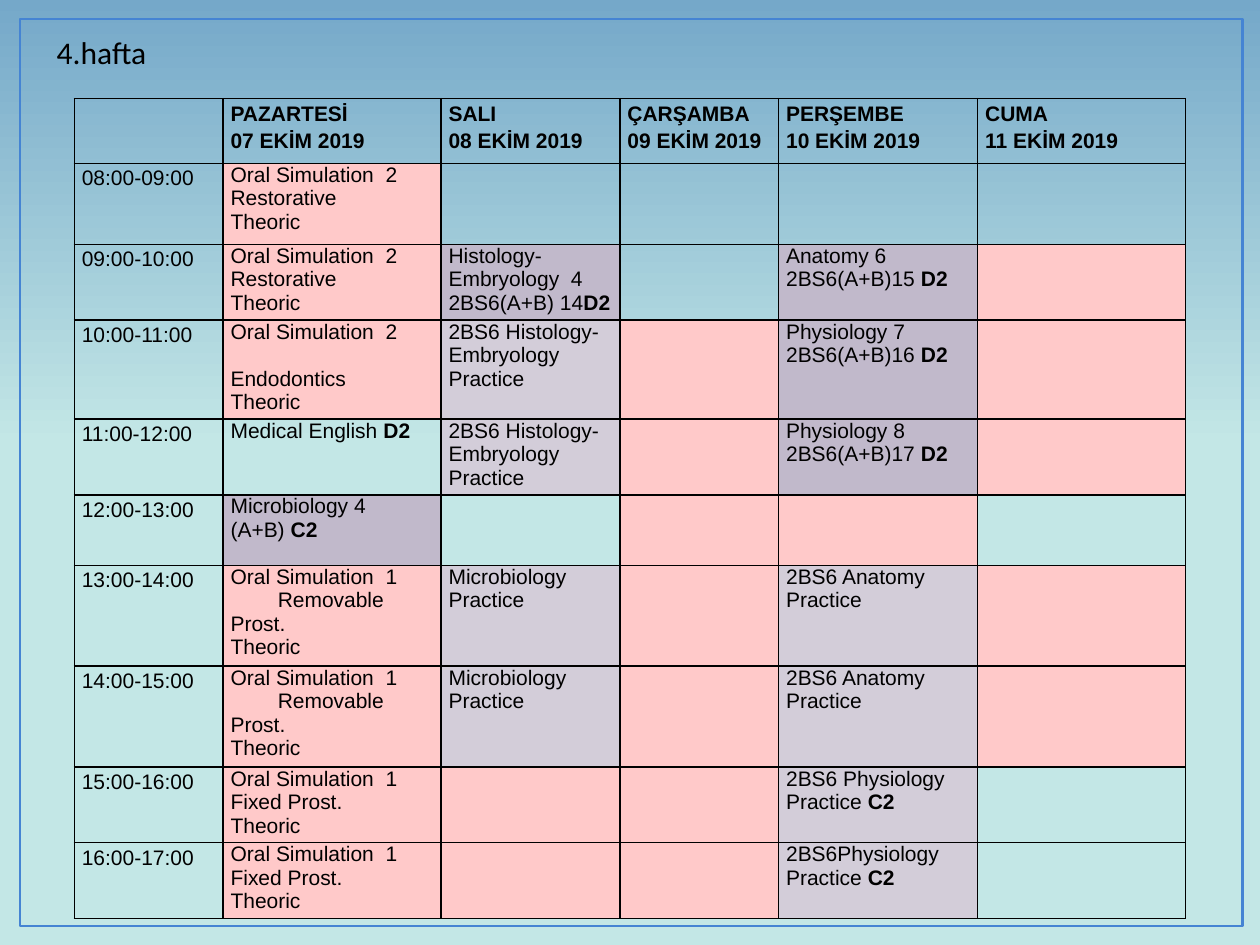
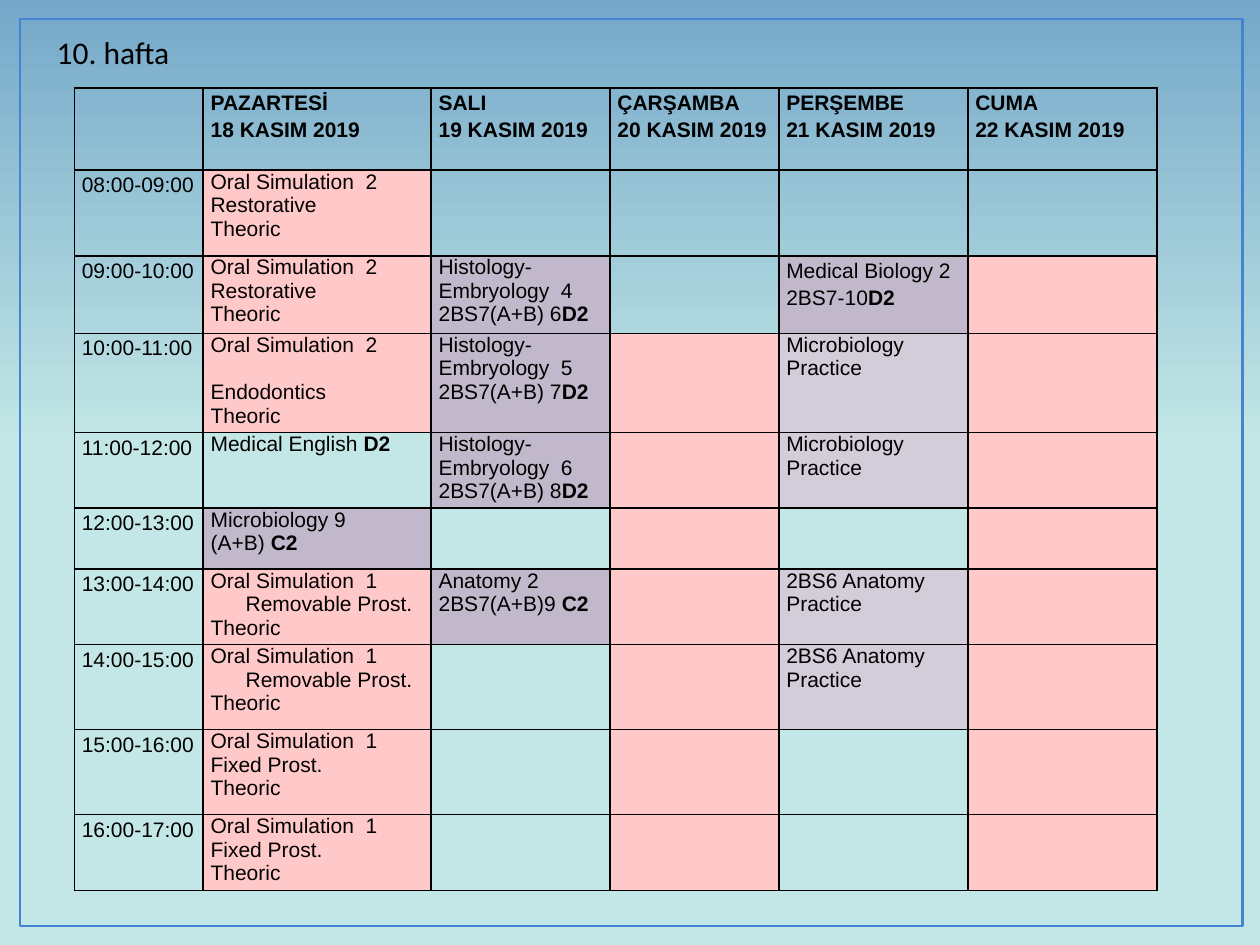
from lxml.etree import SubElement
from pptx import Presentation
from pptx.dml.color import RGBColor
from pptx.enum.shapes import MSO_SHAPE
from pptx.enum.text import MSO_ANCHOR, MSO_AUTO_SIZE, PP_ALIGN
from pptx.oxml.ns import qn
from pptx.util import Pt

FILLS = {"pink": "FFC9C9", "violet": "C1B9CB", "lilac": "D3CDD9"}
CELL_FORMAT = {"margin_left": Pt(4.3), "margin_right": Pt(4.3),
               "margin_top": 0, "margin_bottom": 0}
TITLE_FORMAT = {"word_wrap": False, "auto_size": MSO_AUTO_SIZE.SHAPE_TO_FIT_TEXT,
                "vertical_anchor": MSO_ANCHOR.TOP}
DAYS = ["PAZARTESİ", "SALI", "ÇARŞAMBA", "PERŞEMBE", "CUMA"]

# Lessons: "|" starts a paragraph, "*" starts bold text,
# ">" indents a first line, "^" leaves a line free above
REST = "Oral Simulation  2 Restorative|Theoric"
ENDO = "Oral Simulation  2|^Endodontics|Theoric"
REMOVABLE = "Oral Simulation  1|>Removable Prost.|Theoric"
FIXED = "Oral Simulation  1 Fixed Prost.|Theoric"
HISTOLOGY = "2BS6 Histology-Embryology Practice"
MICRO = "Microbiology|Practice"
ANATOMY = "2BS6 Anatomy Practice"
MONDAY = [REST, REST, ENDO, "Medical English *D2", "Microbiology {}|(A+B) *C2",
          REMOVABLE, REMOVABLE, FIXED, FIXED]
MONDAY_FILLS = ["pink"] * 3 + ["", "violet"] + ["pink"] * 4

# Each day has nine hours of (fill, text)
NONE, PINK = ("", ""), ("pink", "")
WEEKS = [
    {"title": "4.hafta", "first_day": 7, "month": "EKİM", "microbiology": 4,
     "indent": 27, "title_width": 70.5, "top": 56.3,
     "cols": [85, 124.6, 102.2, 90.7, 113.8, 118.8],
     "rows": [37, 46.3, 41.7, 53.7, 40.5, 40.3, 53.7, 53.7, 40.5, 40.5],
     "days": [
         [NONE, ("violet", "Histology-Embryology  4|2BS6(A+B) 14*D2"),
          ("lilac", HISTOLOGY), ("lilac", HISTOLOGY), NONE,
          ("lilac", MICRO), ("lilac", MICRO), PINK, PINK],
         [NONE, NONE] + [PINK] * 7,
         [NONE, ("violet", "Anatomy 6|2BS6(A+B)15 *D2"),
          ("violet", "Physiology 7|2BS6(A+B)16 *D2"),
          ("violet", "Physiology 8|2BS6(A+B)17 *D2"), PINK,
          ("lilac", ANATOMY), ("lilac", ANATOMY),
          ("lilac", "2BS6 Physiology Practice *C2"),
          ("lilac", "2BS6Physiology Practice *C2")],
         [NONE, PINK, PINK, PINK, NONE, PINK, PINK, NONE, NONE]]},
    {"title": "10. hafta", "first_day": 18, "month": "KASIM", "microbiology": 9,
     "indent": 20, "title_width": 80, "top": 50.2,
     "cols": [73.6, 130.3, 102.2, 96.5, 108, 108],
     "rows": [47, 49, 44.3, 53.7, 40.3, 34.7, 42.3, 48.6, 48.6, 40.5],
     "days": [
         [NONE, ("violet", "Histology-Embryology  4|2BS7(A+B) 6*D2"),
          ("violet", "Histology-Embryology  5|2BS7(A+B) 7*D2"),
          ("violet", "Histology-Embryology  6|2BS7(A+B) 8*D2"), NONE,
          ("violet", "Anatomy 2|2BS7(A+B)9 *C2"), NONE, NONE, NONE],
         [NONE, NONE] + [PINK] * 7,
         [NONE, ("violet", "Medical Biology 2|2BS7-10*D2"), ("lilac", MICRO),
          ("lilac", MICRO), NONE, ("lilac", ANATOMY), ("lilac", ANATOMY), NONE, NONE],
         [NONE] + [PINK] * 8]},
]


def rgb(color):
    return RGBColor.from_string(color)


def fill_cell(cell, fill, text, spacing, indent):
    for name, value in CELL_FORMAT.items():
        setattr(cell, name, value)
    tc_pr = cell._tc.get_or_add_tcPr()
    for side in ("a:lnL", "a:lnR", "a:lnT", "a:lnB"):
        ln = SubElement(tc_pr, qn(side), w=str(Pt(1)))
        SubElement(SubElement(ln, qn("a:solidFill")), qn("a:srgbClr"), val="000000")
    if fill:
        cell.fill.solid()
        cell.fill.fore_color.rgb = rgb(FILLS[fill])
    else:
        cell.fill.background()
    tf = cell.text_frame
    for i, line in enumerate(text.split("|") if text else []):
        p = tf.paragraphs[0] if i == 0 else tf.add_paragraph()
        p.line_spacing = spacing
        if line.startswith("^"):
            p.space_before = Pt(13.5)
        if line.startswith(">"):
            p_pr = p._p.get_or_add_pPr()
            p_pr.set("marL", "0")
            p_pr.set("indent", str(Pt(indent)))
        for j, part in enumerate(line.lstrip("^>").split("*")):
            if part:
                r = p.add_run()
                r.text = part
                font = {"name": "Arial", "size": Pt(12), "bold": j == 1}
                for name, value in font.items():
                    setattr(r.font, name, value)
                r.font.color.rgb = rgb("000000")


prs = Presentation()
prs.slide_width, prs.slide_height = Pt(720), Pt(540)

# Background shared by all slides
master = prs.slide_master
bg = master.background.fill
bg.gradient()
bg.gradient_angle = 90
for stop, (position, color) in zip(bg.gradient_stops, [(0.53, "C3E7E6"), (1, "75A8C9")]):
    stop.position = position
    stop.color.rgb = rgb(color)

for number, week in enumerate(WEEKS):
    s = prs.slides.add_slide(prs.slide_layouts[5])

    # Frame, moved to the master once
    if number == 0:
        frame = s.shapes.add_shape(MSO_SHAPE.RECTANGLE, Pt(11.5), Pt(10.8), Pt(698.5), Pt(518.4))
        frame.shadow.inherit = False
        frame.fill.background()
        frame.line.color.rgb = rgb("4584D3")
        frame.line.width = Pt(1.5)
        frame._element.nvSpPr.cNvPr.set("id", "99")
        master.shapes._spTree.append(frame._element)

    # Title
    title = s.shapes.title
    title.left, title.top, title.width, title.height = (
        Pt(25.2), Pt(15.1), Pt(week["title_width"]), Pt(29))
    tf = title.text_frame
    for name, value in TITLE_FORMAT.items():
        setattr(tf, name, value)
    p = tf.paragraphs[0]
    p.alignment = PP_ALIGN.LEFT
    r = p.add_run()
    r.text = week["title"]
    r.font.name, r.font.size = "Calibri", Pt(18)
    r.font.color.rgb = rgb("000000")

    # Timetable
    table = s.shapes.add_table(10, 6, Pt(42.5), Pt(week["top"]),
                               Pt(sum(week["cols"])), Pt(sum(week["rows"]))).table
    table.first_row = table.horz_banding = False
    for column, width in zip(table.columns, week["cols"]):
        column.width = Pt(width)
    for row, height in zip(table.rows, week["rows"]):
        row.height = Pt(height)

    header = [NONE] + [("", f"*{day}|*{week['first_day'] + i} {week['month']} 2019"
                        if week["first_day"] + i > 9 else
                        f"*{day}|*0{week['first_day'] + i} {week['month']} 2019")
                       for i, day in enumerate(DAYS)]
    hours = [("", f"{h:02}:00-{h + 1:02}:00") for h in range(8, 17)]
    monday = [(fill, text.format(week["microbiology"]))
              for fill, text in zip(MONDAY_FILLS, MONDAY)]
    grid = [header] + list(zip(hours, monday, *week["days"]))
    for y, line in enumerate(grid):
        for x, (fill, text) in enumerate(line):
            loose = y == 0 or x == 0 or text.startswith("Medical Biology")
            fill_cell(table.cell(y, x), fill, text, 1.15 if loose else 1.0, week["indent"])

prs.save("out.pptx")
